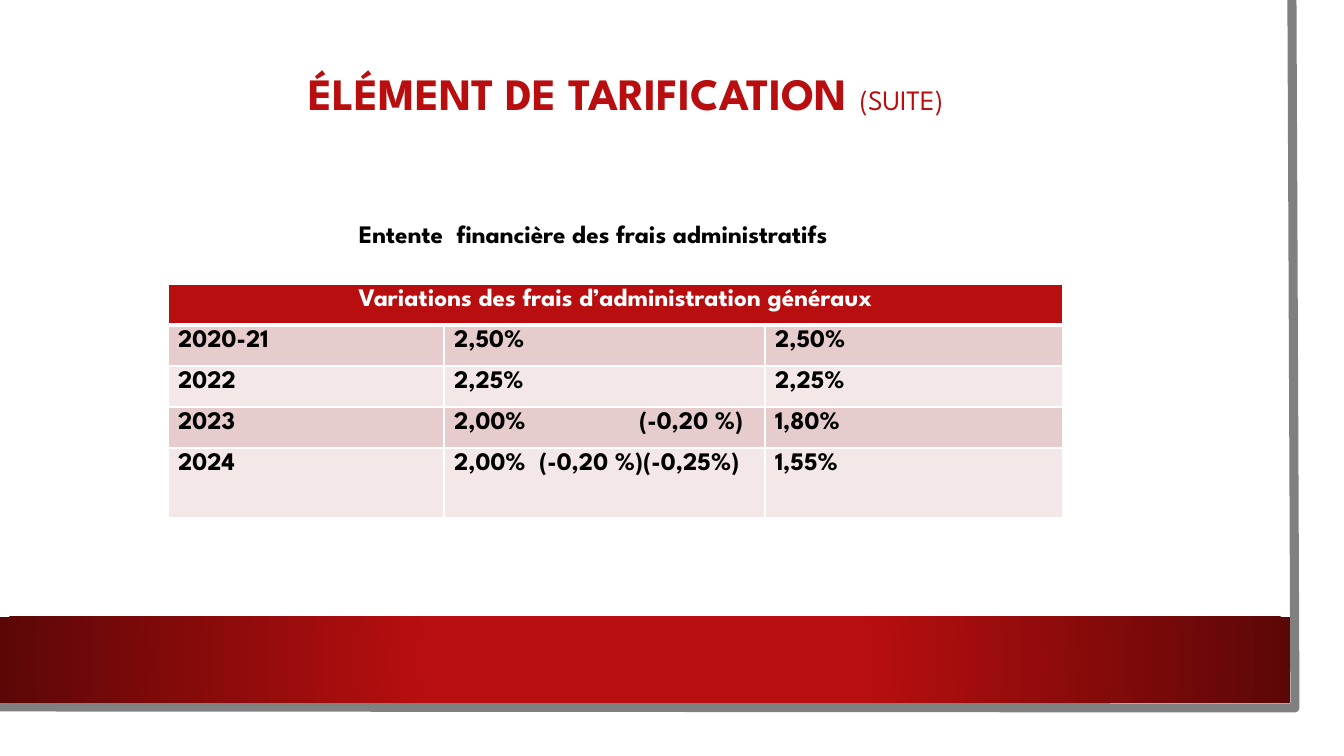
import pptx
import pptx.dml.color
import pptx.enum.text
import pptx.oxml
import pptx.oxml.ns
import pptx.util

EMU_PER_PX = 914400 / 100.8
FONT = "League Spartan"
RED, DARK_RED, GREY, WHITE, BLACK = "B80E0F", "5C0707", "808080", "FFFFFF", "000000"
BANDS = ("E6CCCC", "F3E7E7")
CENTER = pptx.enum.text.PP_ALIGN.CENTER

COLUMN_WIDTHS = (276, 321, 298)
ROW_HEIGHTS = (41, 41, 41, 41, 70)
TABLE_HEADING = "Variations des frais d’administration généraux"
RATES = (
    ("2020-21", "2,50%", "2,50%"),
    ("2022", "2,25%", "2,25%"),
    ("2023", "2,00%\t(-0,20 %)", "1,80%"),
    ("2024", "2,00%\t(-0,20 %)(-0,25%)", "1,55%"),
)
TAB_STOPS = {"2023": 185, "2024": 85}


def px(length):
    return pptx.util.Emu(round(length * EMU_PER_PX))


def color(value):
    return pptx.dml.color.RGBColor.from_string(value)


def xml(markup):
    """Parse an element whose opening tag carries the mark NS for its namespace."""
    return pptx.oxml.parse_xml(markup.replace("NS", pptx.oxml.ns.nsdecls("a"), 1))


def write(para, text, size=18, bold=True, fill=BLACK, align=None, tab=None):
    """Add a run to a paragraph, with an optional tab stop in px."""
    if tab:
        para._p.get_or_add_pPr().append(
            xml(f'<a:tabLst NS><a:tab pos="{px(tab)}" algn="l"/></a:tabLst>'))
    if align is not None:
        para.alignment = align
    span = para.add_run()
    span.text = text
    span.font.name = FONT
    span.font.size = pptx.util.Pt(size)
    span.font.bold = bold
    span.font.color.rgb = color(fill)


def add_frame_edge(page):
    """Draw the grey line down the right side and along the bottom."""
    builder = page.shapes.build_freeform(1292, 0, scale=EMU_PER_PX)
    builder.add_line_segments([(1295, 708), (-3, 707)], close=False)
    edge = builder.convert_to_shape()
    edge.shadow.inherit = False
    edge.fill.background()
    edge.line.color.rgb = color(GREY)
    edge.line.width = pptx.util.Pt(6.5)


def add_footer_band(page):
    band = page.shapes.add_shape(
        pptx.enum.shapes.MSO_SHAPE.RECTANGLE, px(0), px(617), px(1290), px(86))
    band.shadow.inherit = False
    band.line.fill.background()
    band.fill.gradient()
    gradient = band._element.spPr.find(pptx.oxml.ns.qn("a:gradFill"))
    gradient.getparent().replace(gradient, xml(
        '<a:gradFill NS rotWithShape="1"><a:gsLst>'
        f'<a:gs pos="34000"><a:srgbClr val="{RED}"/></a:gs>'
        f'<a:gs pos="100000"><a:srgbClr val="{DARK_RED}"/></a:gs></a:gsLst>'
        '<a:path path="circle"><a:fillToRect l="50000" t="50000" r="50000" b="50000"/>'
        '</a:path></a:gradFill>'))


def add_title(page):
    title = page.shapes.title
    title.left, title.top, title.width, title.height = px(76), px(68), px(1100), px(56)
    frame = title.text_frame
    frame.auto_size = pptx.enum.text.MSO_AUTO_SIZE.NONE
    frame.vertical_anchor = pptx.enum.text.MSO_ANCHOR.MIDDLE
    para = frame.paragraphs[0]
    para.line_spacing = 0.9
    write(para, "ÉLÉMENT DE TARIFICATION ", size=32, fill=RED, align=CENTER)
    write(para, "(SUITE)", size=20, bold=False, fill=RED)


def add_caption(page, text):
    box = page.shapes.add_textbox(px(349), px(213), px(535), px(40))
    box.text_frame.word_wrap = True
    write(box.text_frame.paragraphs[0], text)


def style_cell(cell, fill, bottom=1):
    """Give a cell white borders, the lower one of the given points, and a fill."""
    properties = cell._tc.get_or_add_tcPr()
    for side, points in (("L", 1), ("R", 1), ("T", 1), ("B", bottom)):
        properties.append(xml(
            f'<a:ln{side} NS w="{pptx.util.Pt(points)}"><a:solidFill>'
            f'<a:srgbClr val="{WHITE}"/></a:solidFill></a:ln{side}>'))
    cell.fill.solid()
    cell.fill.fore_color.rgb = color(fill)


def add_rate_table(page):
    table = page.shapes.add_table(
        len(ROW_HEIGHTS), len(COLUMN_WIDTHS), px(168), px(284),
        px(sum(COLUMN_WIDTHS)), px(sum(ROW_HEIGHTS))).table
    for column, width in zip(table.columns, COLUMN_WIDTHS):
        column.width = px(width)
    for row, height in zip(table.rows, ROW_HEIGHTS):
        row.height = px(height)

    for cell in table.rows[0].cells:
        style_cell(cell, RED, bottom=3)
    heading = table.cell(0, 0)
    heading.merge(table.cell(0, len(COLUMN_WIDTHS) - 1))
    write(heading.text_frame.paragraphs[0], TABLE_HEADING, fill=WHITE, align=CENTER)

    for index, rates in enumerate(RATES):
        for cell, text in zip(table.rows[index + 1].cells, rates):
            style_cell(cell, BANDS[index % 2])
            tab = TAB_STOPS[rates[0]] if "\t" in text else None
            write(cell.text_frame.paragraphs[0], text, tab=tab)


def main():
    deck = pptx.Presentation()
    deck.slide_width, deck.slide_height = px(1344), px(756)
    page = deck.slides.add_slide(deck.slide_layouts[5])
    add_frame_edge(page)
    add_footer_band(page)
    add_title(page)
    add_caption(page, "Entente  financière des frais administratifs")
    add_rate_table(page)
    deck.save("out.pptx")


if __name__ == "__main__":
    import pptx.enum.shapes
    main()
